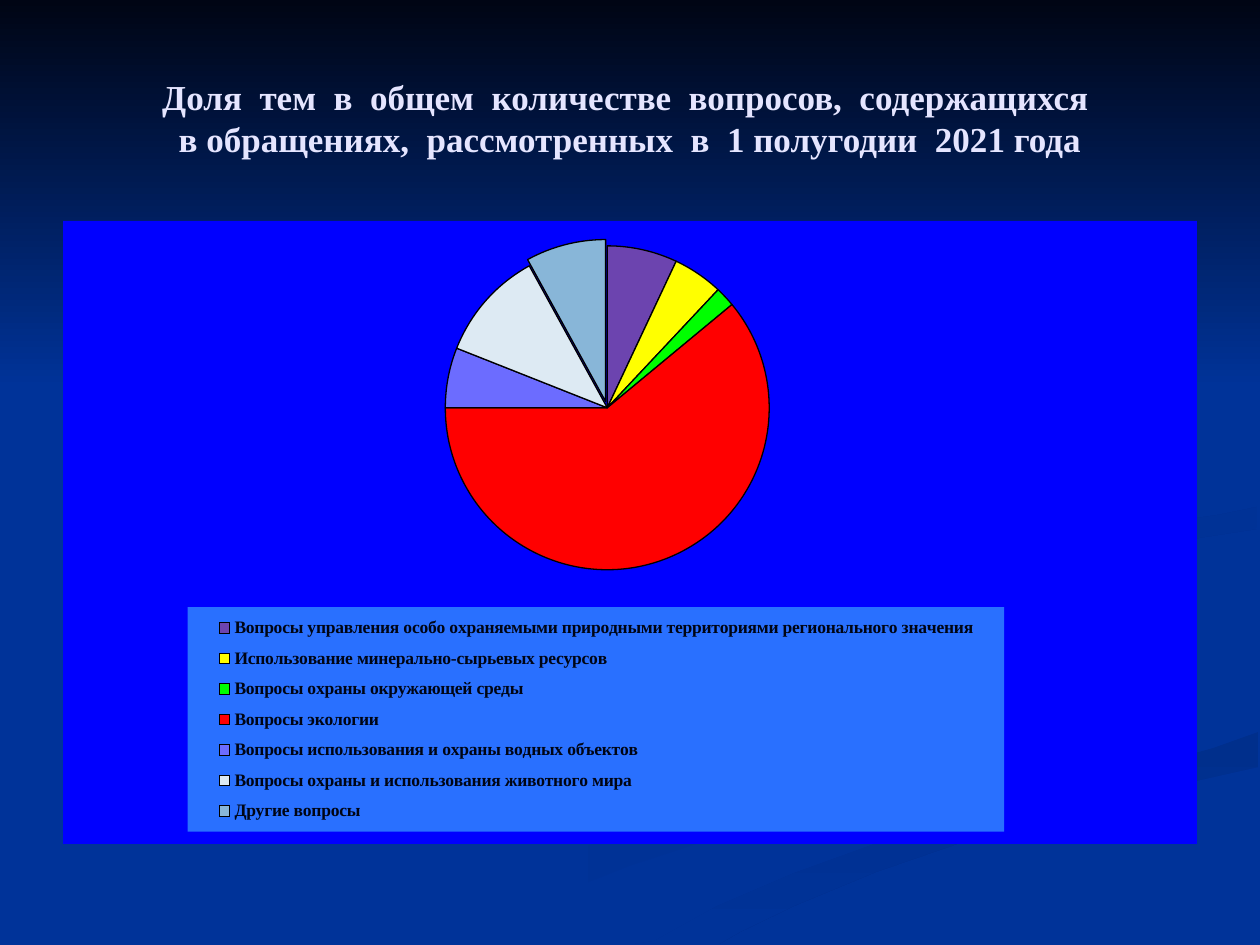
import lxml.etree
import pptx
import pptx.chart.data
import pptx.dml.color
import pptx.enum.chart
import pptx.enum.shapes
import pptx.enum.text
import pptx.oxml.ns
import pptx.util

EMU_PER_PX = 914400 // 126
FONT = "Times New Roman"
COLOURS = {
    "night": "000514", "ground": "003399", "shade": "003193",
    "deep": "002F8C", "dusk": "003091", "title": "E5E5FF",
    "panel": "0000FF", "legend": "2970FF", "black": "000000", "white": "FFFFFF",
}
TITLE = ("Доля  тем  в  общем  количестве  вопросов,  содержащихся \v"
         "в обращениях,  рассмотренных  в  1 полугодии  2021 года")
TOPICS = [
    ("Вопросы управления особо охраняемыми природными территориями регионального значения", 7, "6C44AF"),
    ("Использование минерально-сырьевых ресурсов", 5, "FFFF00"),
    ("Вопросы охраны окружающей среды", 2, "00FF00"),
    ("Вопросы экологии", 61, "FF0000"),
    ("Вопросы использования и охраны водных объектов", 6, "6C6CFF"),
    ("Вопросы охраны и использования животного мира", 11, "DDEAF3"),
    ("Другие вопросы", 8, "88B6D8"),
]
LEFT_SWOOSH = [
    (984, 697), (939, 678), (859, 654), (789, 633), (740, 606), (723, 585),
    (718, 595), (732, 610), (770, 629), (856, 654), (934, 679), (984, 701),
    (990, 713), (983, 730), (944, 748), (881, 767), (776, 793), (679, 818),
    (577, 849), (474, 891), (378, 944), (455, 944), (543, 900), (629, 866),
    (748, 827), (852, 799), (932, 779), (983, 762), (1002, 746), (1008, 732),
    (1002, 714),
]
SHARED_EDGE = [
    (654, 941), (717, 906), (794, 873), (877, 843), (1004, 804), (1138, 769),
    (1213, 748), (1258, 732),
]
LOWER_BAND = SHARED_EDGE + [
    (1258, 767), (1138, 794), (989, 833), (876, 872), (794, 906), (740, 932),
    (719, 944), (634, 944),
]
WIDE_BAND = [
    (914, 585), (925, 609), (956, 627), (1023, 649), (1097, 668), (1159, 689),
    (1188, 718), (1184, 735), (1158, 752), (1110, 766), (1023, 788), (887, 825),
    (780, 862), (663, 912), (601, 944), (634, 944),
] + SHARED_EDGE + [
    (1259, 678), (1208, 669), (1139, 654), (1048, 627), (1000, 605), (984, 583),
    (998, 563), (1052, 542), (1133, 527), (1220, 515), (1259, 507), (1259, 488),
    (1187, 503), (1101, 514), (1018, 525), (951, 544), (920, 566),
]
UPPER_BAND = [
    (984, 580), (990, 597), (1016, 614), (1041, 625), (1019, 610), (1014, 595),
    (1028, 578), (1082, 558), (1179, 541), (1257, 529), (1257, 507), (1218, 515),
    (1131, 527), (1052, 542), (998, 563),
]


def colour(name):
    return pptx.dml.color.RGBColor.from_string(COLOURS.get(name, name))


def tag(name):
    return pptx.oxml.ns.qn(name)


def solid_properties(name):
    properties = lxml.etree.Element(tag("c:spPr"))
    fill = lxml.etree.SubElement(properties, tag("a:solidFill"))
    lxml.etree.SubElement(fill, tag("a:srgbClr"), val=COLOURS[name])
    line = lxml.etree.SubElement(properties, tag("a:ln"))
    lxml.etree.SubElement(line, tag("a:noFill"))
    return properties


def manual_layout(x, y, width, height, inner=False):
    layout = lxml.etree.Element(tag("c:layout"))
    manual = lxml.etree.SubElement(layout, tag("c:manualLayout"))
    entries = [("layoutTarget", "inner")] if inner else []
    entries += [("xMode", "edge"), ("yMode", "edge"),
                ("x", x), ("y", y), ("w", width), ("h", height)]
    for name, value in entries:
        lxml.etree.SubElement(manual, tag("c:" + name), val=str(value))
    return layout


class Painter:
    def __init__(self, page):
        self.page = page

    def lengths(self, *pixels):
        return [pptx.util.Emu(value * EMU_PER_PX) for value in pixels]

    def background(self, name):
        fill = self.page.background.fill
        fill.solid()
        fill.fore_color.rgb = colour(name)

    def paint(self, shape, names, angle):
        shape.shadow.inherit = False
        shape.line.fill.background()
        if len(names) == 1:
            shape.fill.solid()
            shape.fill.fore_color.rgb = colour(names[0])
            return
        shape.fill.gradient()
        shape.fill.gradient_angle = -angle % 360
        for stop, name, position in zip(shape.fill.gradient_stops, names, (0, 1)):
            stop.color.rgb = colour(name)
            stop.position = position

    def rectangle(self, at, names, angle=0):
        kind = pptx.enum.shapes.MSO_SHAPE.RECTANGLE
        self.paint(self.page.shapes.add_shape(kind, *self.lengths(*at)), names, angle)

    def outline(self, points, names, angle=0):
        builder = self.page.shapes.build_freeform(*points[0], scale=EMU_PER_PX)
        builder.add_line_segments(points[1:], close=True)
        self.paint(builder.convert_to_shape(), names, angle)

    def heading(self, at, text, size):
        box = self.page.shapes.add_textbox(*self.lengths(*at))
        box.text_frame.word_wrap = True
        box.text_frame.vertical_anchor = pptx.enum.text.MSO_ANCHOR.MIDDLE
        para = box.text_frame.paragraphs[0]
        para.text = text
        para.alignment = pptx.enum.text.PP_ALIGN.CENTER
        self.style(para.font, size, "title", True)

    def style(self, font, size, name, bold):
        font.name = FONT
        font.size = pptx.util.Pt(size)
        font.bold = bold
        font.color.rgb = colour(name)

    def pie(self, at, topics):
        data = pptx.chart.data.CategoryChartData()
        data.categories = [label for label, value, fill in topics]
        data.add_series("Series 1", [value for label, value, fill in topics])
        kind = pptx.enum.chart.XL_CHART_TYPE.PIE
        chart = self.page.shapes.add_chart(kind, *self.lengths(*at), data).chart
        chart.has_title = False
        self.style(chart.font, 10, "white", False)
        root = chart._chartSpace
        root.find(tag("c:chart")).addnext(solid_properties("panel"))
        area = root.find(".//" + tag("c:plotArea"))
        for layout in area.findall(tag("c:layout")):
            area.remove(layout)
        area.insert(0, manual_layout(0, 0.04, 0.96, 0.52, inner=True))
        self.slices(chart.plots[0], topics)
        self.legend(chart)

    def slices(self, plot, topics):
        plot.vary_by_categories = True
        series = plot.series[0]
        for index, (label, value, fill) in enumerate(topics):
            part = series.points[index].format
            part.fill.solid()
            part.fill.fore_color.rgb = colour(fill)
            part.line.color.rgb = colour("black")
            part.line.width = pptx.util.Pt(0.75)
        last = series._element.findall(tag("c:dPt"))[-1]
        explosion = lxml.etree.Element(tag("c:explosion"), val="4")
        last.find(tag("c:spPr")).addprevious(explosion)

    def legend(self, chart):
        chart.has_legend = True
        legend = chart.legend
        legend.position = pptx.enum.chart.XL_LEGEND_POSITION.BOTTOM
        legend.include_in_layout = False
        self.style(legend.font, 10, "night", True)
        element = legend._element
        for layout in element.findall(tag("c:layout")):
            element.remove(layout)
        element.find(tag("c:legendPos")).addnext(manual_layout(0.11, 0.62, 0.72, 0.36))
        element.find(tag("c:overlay")).addnext(solid_properties("legend"))


def main():
    deck = pptx.Presentation()
    deck.slide_width = pptx.util.Inches(10)
    deck.slide_height = pptx.util.Inches(7.5)
    painter = Painter(deck.slides.add_slide(deck.slide_layouts[6]))
    painter.background("ground")
    painter.outline(LEFT_SWOOSH, ["ground", "shade"])
    painter.outline(LOWER_BAND, ["deep", "ground"], 90)
    painter.outline(WIDE_BAND, ["ground"])
    painter.outline(UPPER_BAND, ["dusk", "ground"], 45)
    painter.rectangle((0, 0, 1260, 388), ["night", "ground"], 90)
    painter.heading((63, 38, 1134, 158), TITLE, 20)
    painter.pie((63, 221, 1134, 623), TOPICS)
    deck.save("out.pptx")


if __name__ == "__main__":
    main()
